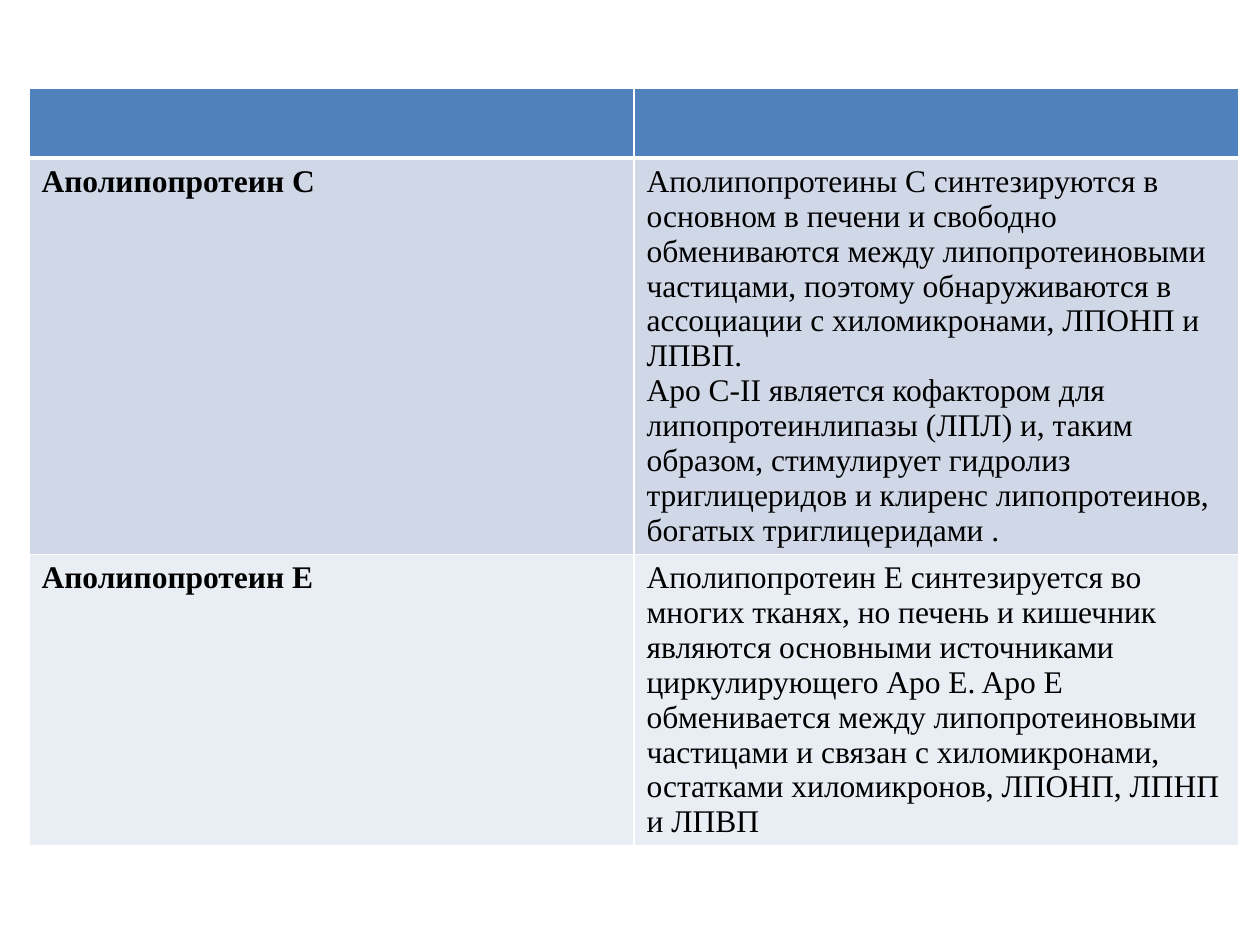
from dataclasses import dataclass

from lxml import etree
from pptx import Presentation
from pptx import util as u
from pptx.dml.color import RGBColor
from pptx.oxml import ns

PX = u.Inches(1) / 126
FONT = "Times New Roman"
COLORS = {
    "header": "4F81BD",
    "band_dark": "D0D8E8",
    "band_light": "E9EDF4",
    "border": "FFFFFF",
    "text": "000000",
}


@dataclass
class ProteinRow:
    height: int
    fill: str
    protein: str = ""
    description: tuple[str, ...] = ()
    bottom_border: int = 1


ROWS = [
    ProteinRow(70, "header", bottom_border=3),
    ProteinRow(396, "band_dark", "Аполипопротеин С", (
        "Аполипопротеины С синтезируются в основном в печени и свободно "
        "обмениваются между липопротеиновыми частицами, поэтому обнаруживаются "
        "в ассоциации с хиломикронами, ЛПОНП и ЛПВП.",
        "Apo C-II является кофактором для липопротеинлипазы (ЛПЛ) и, таким "
        "образом, стимулирует гидролиз триглицеридов и клиренс липопротеинов, "
        "богатых триглицеридами .",
    )),
    ProteinRow(291, "band_light", "Аполипопротеин E", (
        "Аполипопротеин E синтезируется во многих тканях, но печень и кишечник "
        "являются основными источниками циркулирующего Apo E. Apo E "
        "обменивается между липопротеиновыми частицами и связан с "
        "хиломикронами, остатками хиломикронов, ЛПОНП, ЛПНП и ЛПВП",
    )),
]
LEFT, TOP, COLUMN_WIDTH = 29, 88, 605


def px(length: int) -> int:
    return round(length * PX)


def set_borders(cell, top: int, bottom: int) -> None:
    """Add solid cell borders, widths in points, ahead of the fill."""
    properties = cell._tc.get_or_add_tcPr()
    widths = {"lnL": 1, "lnR": 1, "lnT": top, "lnB": bottom}
    for index, (side, width) in enumerate(widths.items()):
        line = etree.Element(ns.qn(f"a:{side}"), w=str(u.Pt(width)))
        solid = etree.SubElement(line, ns.qn("a:solidFill"))
        etree.SubElement(solid, ns.qn("a:srgbClr"), val=COLORS["border"])
        properties.insert(index, line)


def write_cell(cell, paragraphs: tuple[str, ...], bold: bool) -> None:
    cell.text = "\n".join(paragraphs)
    for paragraph in cell.text_frame.paragraphs:
        font = paragraph.font
        font.name, font.size, font.bold = FONT, u.Pt(18), bold
        font.color.rgb = RGBColor.from_string(COLORS["text"])


def draw_table(slide, rows: list[ProteinRow]) -> None:
    height = sum(row.height for row in rows)
    table = slide.shapes.add_table(
        len(rows), 2, px(LEFT), px(TOP), px(2 * COLUMN_WIDTH), px(height)
    ).table
    for column in table.columns:
        column.width = px(COLUMN_WIDTH)

    top_border = 1
    for index, row in enumerate(rows):
        table.rows[index].height = px(row.height)
        write_cell(table.cell(index, 0), (row.protein,), bold=True)
        write_cell(table.cell(index, 1), row.description, bold=False)
        for cell in table.rows[index].cells:
            cell.fill.solid()
            cell.fill.fore_color.rgb = RGBColor.from_string(COLORS[row.fill])
            set_borders(cell, top_border, row.bottom_border)
        top_border = row.bottom_border


def main() -> None:
    presentation = Presentation()
    presentation.slide_width = u.Inches(10)
    presentation.slide_height = u.Inches(7.5)
    slide = presentation.slides.add_slide(presentation.slide_layouts[6])

    # Apolipoproteins and their roles
    draw_table(slide, ROWS)
    presentation.save("out.pptx")


if __name__ == "__main__":
    main()
